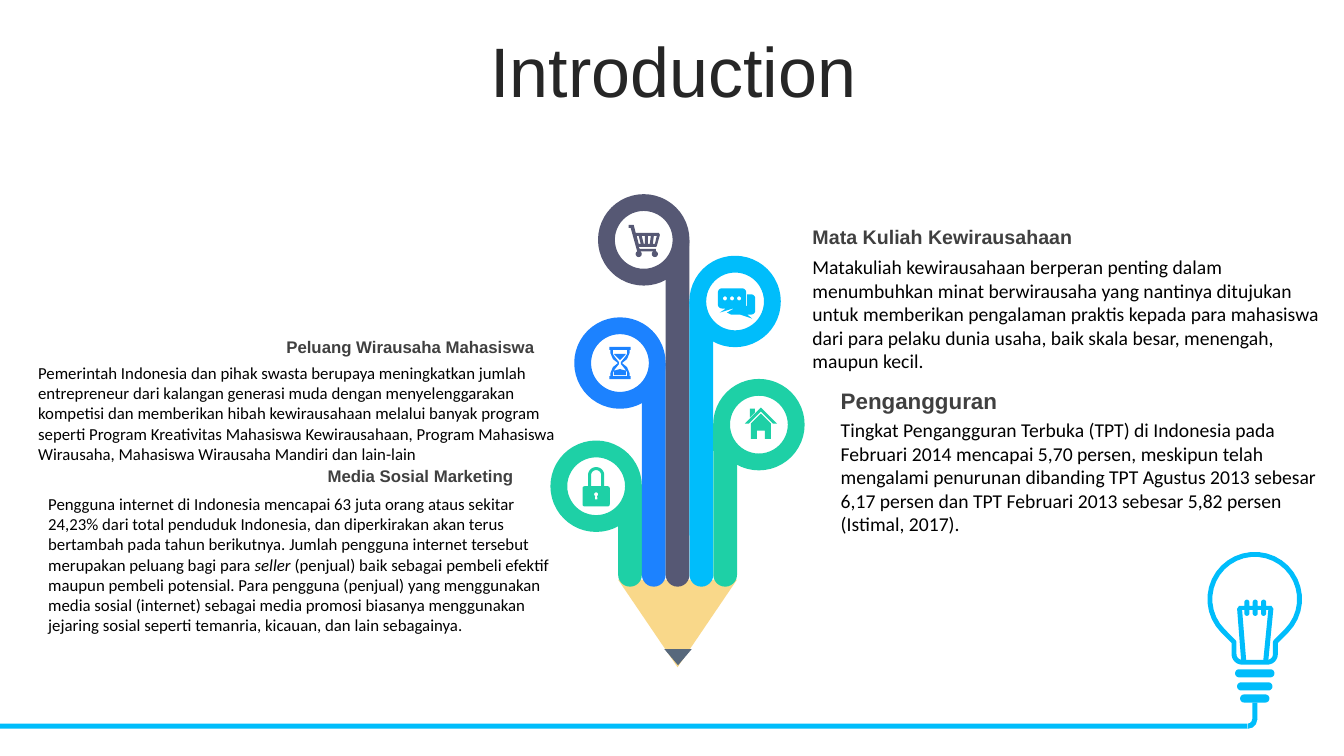
from math import cos, radians, sin
from typing import NamedTuple

from lxml.etree import SubElement
from pptx import Presentation
from pptx.dml.color import RGBColor
from pptx.enum.shapes import MSO_SHAPE as Preset
from pptx.enum.text import MSO_ANCHOR as Anchor, MSO_AUTO_SIZE as AutoSize, PP_ALIGN as Align
from pptx.oxml.ns import qn
from pptx.util import Inches, Pt

CELL = Inches(0.01)
COLS, ROWS = 1333, 750

WHITE = RGBColor(0xFF, 0xFF, 0xFF)
BLACK = RGBColor(0x00, 0x00, 0x00)
INK = RGBColor(0x26, 0x26, 0x26)
GRAY = RGBColor(0x40, 0x40, 0x40)
SKY = RGBColor(0x00, 0xBD, 0xFB)
BLUE = RGBColor(0x1C, 0x82, 0xFF)
GREEN = RGBColor(0x1E, 0xD0, 0xA6)
SLATE = RGBColor(0x56, 0x58, 0x74)
WOOD = RGBColor(0xF5, 0xB3, 0x17)
LEAD = RGBColor(0x57, 0x68, 0x7C)


class Box(NamedTuple):
    left: float
    top: float
    width: float
    height: float

    def area(self, dx, dy, width, height):
        return Box(self.left + dx, self.top + dy, width, height)

    def emu(self):
        return [round(length * CELL) for length in self]


def arc(cx, cy, radius, start, end):
    steps = max(4, round(abs(end - start) / 10))
    angles = [radians(start + (end - start) * i / steps) for i in range(steps + 1)]
    return [(cx + radius * cos(a), cy + radius * sin(a)) for a in angles]


def mirrored(profile):
    half = profile + [(x, -y) for x, y in reversed(profile)]
    return half + [(-x, y) for x, y in reversed(half)]


def pill(x, y, width, height):
    r = height / 2
    return arc(x + r, y + r, r, 90, 270) + arc(x + width - r, y + r, r, -90, 90)


def paint(shape, fill, line=None, weight=0):
    shape.shadow.inherit = False
    shape.fill.solid()
    shape.fill.fore_color.rgb = fill
    if line is None:
        shape.line.fill.background()
    else:
        shape.line.color.rgb = line
        shape.line.width = Pt(weight)
    return shape


def preset(slide, kind, box, fill, line=None, weight=0, rotation=0, adjust=()):
    shape = paint(slide.shapes.add_shape(kind, *box.emu()), fill, line, weight)
    shape.rotation = rotation
    for i, value in enumerate(adjust):
        shape.adjustments[i] = value
    return shape


def outline(slide, origin, contours, fill, line=None, weight=0):
    placed = [[(round((origin[0] + x) * CELL), round((origin[1] + y) * CELL)) for x, y in contour]
              for contour in contours]
    builder = slide.shapes.build_freeform(*placed[0][0])
    for i, contour in enumerate(placed):
        if i:
            builder.move_to(*contour[0])
        builder.add_line_segments(contour[1:], close=True)
    return paint(builder.convert_to_shape(), fill, line, weight)


LOCK = [
    arc(-11.5, 2, 2, 180, 270) + arc(11.5, 2, 2, -90, 0)
    + arc(11.5, 18, 2, 0, 90) + arc(-11.5, 18, 2, 90, 180),
    [(-8, 0)] + arc(0, -11, 8, 180, 360) + [(8, 0), (5, 0)] + arc(0, -11, 5, 360, 180) + [(-5, 0)],
    arc(0, 8, 2, 120, 420) + [(1.4, 13), (-1.4, 13)],
]
HOURGLASS = [
    mirrored([(10.5, -16), (10.5, -13), (9.5, -13), (9.5, -10), (7, -4), (2, 0)]),
    mirrored([(7, -13), (7, -9), (5, -6), (1, -1)]),
    [(-6, -9), (6, -9), (4, -7), (0, -3), (-4, -7)],
    [(0, 6), (6, 7.5), (6, 12), (-6, 12), (-6, 7.5)],
]
CART = [
    [(-10, -15), (-8, -7), (15, -7), (16, -5), (13, 6), (12, 7), (-5, 7), (-4, 9), (12, 9), (12, 12)]
    + arc(11, 14, 3, -60, 240) + arc(-5, 14, 3, -60, 240) + [(-13, -12), (-15, -12), (-15, -15)],
    [(10, -4), (9, 4), (11, 4), (13, -4)],
    [(4, -4), (4, 4), (6, 4), (7, -4)],
    [(-2, -4), (0, 4), (1, 4), (1, -4)],
    [(-7, -4), (-5, 4), (-3, 4), (-5, -4)],
]
CHAT = [
    arc(7, -9, 4, -90, 0) + arc(7, 3, 4, 0, 90) + [(-2, 7), (-15, 11), (-9, 7)]
    + arc(-13, 3, 4, 90, 180) + arc(-13, -9, 4, 180, 270),
    *[arc(x, -3, 2, 0, 360) for x in (-10, -3, 4)],
    [(12, -7)] + arc(16, -3, 4, -90, 0) + arc(16, 9, 4, 0, 90)
    + [(12, 13), (17, 17), (5, 13), (-4, 13), (-8, 11), (-1, 7), (8, 7), (12, 4)],
]
HOUSE = [
    [(2, -17), (18, -1), (14, -1), (2, -13), (-10, -1), (-14, -1)],
    [(2, -11), (12, -1), (12, 14), (6, 14), (6, 6), (-2, 6), (-2, 14), (-8, 14), (-8, -1)],
    [(-9, -16), (-4, -16), (-4, -12), (-9, -7)],
]
STEMS = [(4, -1, GREEN, LOCK), (2, -1, BLUE, HOURGLASS), (0, -1, SLATE, CART),
         (1, 1, SKY, CHAT), (3, 1, GREEN, HOUSE)]


def pencil(slide, box):
    stem, ring, rim, drop, foot = box.width / 5, 74, 8.3, 61.1, 344
    wood = preset(slide, Preset.TRAPEZOID, box.area(0, 337, box.width, 87), WOOD,
                  rotation=180, adjust=[0.79])
    SubElement(wood.element.find(".//" + qn("a:srgbClr")), qn("a:alpha"), val="50000")
    preset(slide, Preset.ISOSCELES_TRIANGLE, box.area(46, 406, 27, 16), LEAD, rotation=180)
    for i, (step, side, color, icon) in enumerate(STEMS):
        left, top = i * stem, step * drop
        preset(slide, Preset.ROUND_2_SAME_RECTANGLE, box.area(left, top, stem, foot - top), color,
               rotation=180, adjust=[0.5, 0])
        ring_left = left + rim if side > 0 else left + stem - rim - ring
        preset(slide, Preset.OVAL, box.area(ring_left, top - ring / 2, ring, ring), WHITE, color, 12)
        center = box.left + ring_left + ring / 2, box.top + top
        outline(slide, center, icon, color)


def bulb(slide, box):
    middle, origin = box.width / 2, (box.left, box.top)
    glass = (arc(middle, middle, middle, 135, 405) + [(65, 87)]
             + arc(57, 99, 8, 0, 90) + arc(32, 99, 8, 90, 180) + [(24, 87)])
    outline(slide, origin, [glass], WHITE, SKY, 3.5)
    outline(slide, origin, [pill(25, 114, 39, 8), pill(27, 127, 35, 8), pill(30, 139, 29, 8)], SKY)
    prongs = [36.7, 45, 53.3]
    upper = [p for x in prongs for p in arc(x, 47.5, 2.5, 180, 360) + [(x + 2.5, 51), (x + 5.8, 51)]]
    lower = [p for x in reversed(prongs)
             for p in [(x + 2.5, 55)] + arc(x, 58.5, 2.5, 0, 180) + [(x - 2.5, 55)]]
    filament = ([(27, 54), (29, 51), (34.2, 51)] + upper + [(61, 51), (63, 54)]
                + arc(55.5, 105, 2.5, 0, 180) + [(58, 55)] + lower + [(32, 55)]
                + arc(33.5, 105, 2.5, 0, 180))
    outline(slide, origin, [filament], SKY)
    preset(slide, Preset.RECTANGLE, box.area(-box.left, 168, box.left + 37, 5), SKY)
    preset(slide, Preset.RECTANGLE, box.area(42, 147, 5, 17), SKY)
    preset(slide, Preset.BLOCK_ARC, box.area(28, 154, 19, 19), SKY, adjust=[0, 54, 0.27])


def write(slide, box, runs, look, align=Align.LEFT, anchor=Anchor.TOP, spacing=1.0):
    frame = slide.shapes.add_textbox(*box.emu()).text_frame
    for key, value in {"word_wrap": True, "auto_size": AutoSize.SHAPE_TO_FIT_TEXT,
                       "vertical_anchor": anchor}.items():
        setattr(frame, key, value)
    line = frame.paragraphs[0]
    line.alignment, line.line_spacing = align, spacing
    for i, words in enumerate(runs):
        run = line.add_run()
        run.text = words
        for key, value in {**look, "italic": i % 2 == 1}.items():
            if key == "color":
                run.font.color.rgb = value
            else:
                setattr(run.font, key, value)


def topic(slide, head_box, body_box, heading, body, head_size, body_size, align=Align.LEFT):
    write(slide, head_box, [heading],
          {"name": "Arial", "size": Pt(head_size), "bold": True, "color": GRAY}, align, Anchor.MIDDLE)
    write(slide, body_box, body, {"name": "Calibri", "size": Pt(body_size), "color": BLACK})


def introduction(slide, page):
    bulb(slide, page.area(1200, 550, 89, 173))
    write(slide, page.area(35, 37, 1266, 79), ["Introduction"],
          {"name": "Arial", "size": Pt(50), "color": INK}, Align.CENTER, Anchor.MIDDLE, 0.8)
    pencil(slide, page.area(613, 238, 118, 424))
    topic(slide, page.area(796, 218, 421, 34), page.area(796, 248, 534, 128),
          "Mata Kuliah Kewirausahaan", ["Matakuliah kewirausahaan berperan penting dalam menumbuhkan minat berwirausaha yang nantinya ditujukan untuk memberikan pengalaman praktis kepada para mahasiswa dari para pelaku dunia usaha, baik skala besar, menengah, maupun kecil."], 14, 14)
    topic(slide, page.area(824, 379, 421, 37), page.area(824, 410, 509, 155),
          "Pengangguran", ["Tingkat Pengangguran Terbuka (TPT) di Indonesia pada Februari 2014 mencapai 5,70 persen, meskipun telah mengalami penurunan dibanding TPT Agustus 2013 sebesar 6,17 persen dan TPT Februari 2013 sebesar 5,82 persen (Istimal, 2017)."], 16, 14)
    topic(slide, page.area(119, 329, 421, 30), page.area(28, 355, 541, 111),
          "Peluang Wirausaha Mahasiswa", ["Pemerintah Indonesia dan pihak swasta berupaya meningkatkan jumlah entrepreneur dari kalangan generasi muda dengan menyelenggarakan kompetisi dan memberikan hibah kewirausahaan melalui banyak program seperti Program Kreativitas Mahasiswa Kewirausahaan, Program Mahasiswa Wirausaha, Mahasiswa Wirausaha Mandiri dan lain-lain"], 12, 12, Align.RIGHT)
    topic(slide, page.area(98, 457, 421, 30), page.area(38, 485, 526, 151),
          "Media Sosial Marketing", ["Pengguna internet di Indonesia mencapai 63 juta orang ataus sekitar 24,23% dari total penduduk Indonesia, dan diperkirakan akan terus bertambah pada tahun berikutnya. Jumlah pengguna internet tersebut merupakan peluang bagi para ", "seller", " (penjual) baik sebagai pembeli efektif maupun pembeli potensial. Para pengguna (penjual) yang menggunakan media sosial (internet) sebagai media promosi biasanya menggunakan jejaring sosial seperti temanria, kicauan, dan lain sebagainya."], 12, 12, Align.RIGHT)


def main():
    deck = Presentation()
    deck.slide_width, deck.slide_height = COLS * CELL, ROWS * CELL
    introduction(deck.slides.add_slide(deck.slide_layouts[6]), Box(0, 0, COLS, ROWS))
    deck.save("out.pptx")


if __name__ == "__main__":
    main()
